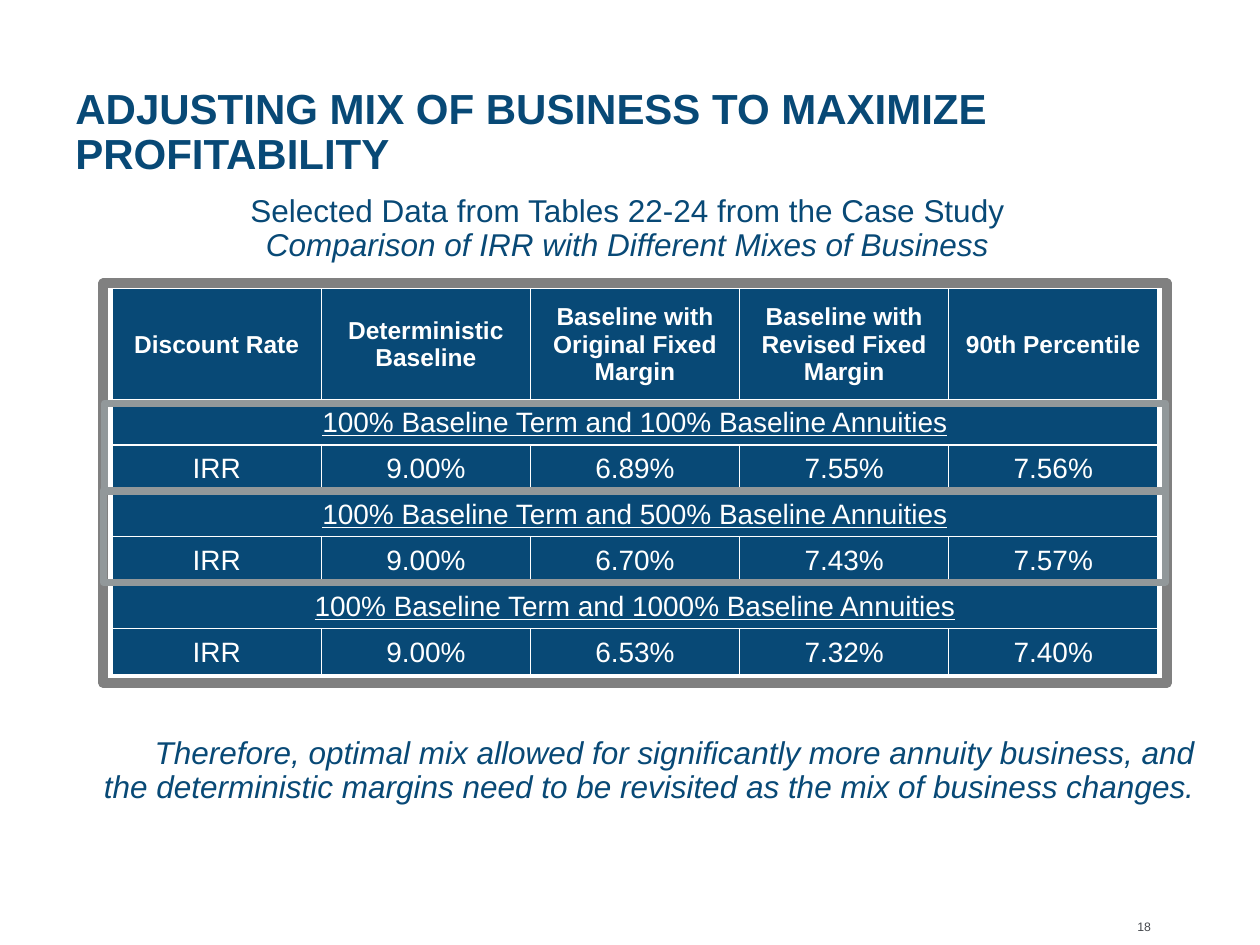
import dataclasses
import typing

import lxml.etree
import pptx
import pptx.dml.color
import pptx.enum.shapes
import pptx.enum.text
import pptx.oxml.ns
import pptx.util

Inches = pptx.util.Inches
Align = pptx.enum.text.PP_ALIGN
Anchor = pptx.enum.text.MSO_ANCHOR


@dataclasses.dataclass(frozen=True)
class Theme:
    font: str = "Arial"
    navy: str = "084976"
    white: str = "FFFFFF"
    frame: str = "808080"
    band: str = "92989A"
    number: str = "45484D"
    title: int = 24
    body: int = 18
    head: int = 14
    cell: int = 16
    small: int = 7


@dataclasses.dataclass(frozen=True)
class Box:
    left: float
    top: float
    width: float
    height: float

    def place(self) -> list:
        return [Inches(n) for n in (self.left, self.top, self.width, self.height)]


@dataclasses.dataclass(frozen=True)
class Frame:
    box: Box
    color: str
    weight: float


@dataclasses.dataclass(frozen=True)
class Line:
    text: str
    size: int
    color: str
    align: Align = Align.LEFT
    bold: bool = False
    italic: bool = False
    under: bool = False
    pitch: float = 1.0
    before: float = 0


@dataclasses.dataclass(frozen=True)
class Mix:
    name: str
    rates: tuple


LOOK = Theme()

# Content
HEADS = ("Discount Rate", "Deterministic Baseline",
         "Baseline with Original Fixed Margin",
         "Baseline with Revised Fixed Margin", "90th Percentile")
MIXES = (
    Mix("100% Baseline Term and 100% Baseline Annuities",
        ("9.00%", "6.89%", "7.55%", "7.56%")),
    Mix("100% Baseline Term and 500% Baseline Annuities",
        ("9.00%", "6.70%", "7.43%", "7.57%")),
    Mix("100% Baseline Term and 1000% Baseline Annuities",
        ("9.00%", "6.53%", "7.32%", "7.40%")),
)
TITLE = Line("ADJUSTING MIX OF BUSINESS TO MAXIMIZE PROFITABILITY",
             LOOK.title, LOOK.navy, bold=True, pitch=0.9)
BODY = Line("Selected Data from Tables 22-24 from the Case Study",
            LOOK.body, LOOK.navy, Align.CENTER, pitch=0.9)
NOTE = dataclasses.replace(BODY, italic=True, align=Align.RIGHT)
COPY = (
    BODY,
    dataclasses.replace(
        BODY, text="Comparison of IRR with Different Mixes of Business",
        italic=True),
    dataclasses.replace(
        NOTE, text="Therefore, optimal mix allowed for significantly more "
        "annuity business, and", before=271),
    dataclasses.replace(
        NOTE, text="the deterministic margins need to be revisited as the "
        "mix of business changes."),
)
OUTER = Frame(Box(0.82, 2.25, 8.44, 3.17), LOOK.frame, 5.75)
BANDS = (Frame(Box(0.82, 3.89, 8.43, 0.73), LOOK.band, 4),
         Frame(Box(0.83, 3.2, 8.42, 0.7), LOOK.band, 4))
GRID = Box(0.89, 2.29, 8.3, 3.07)
TALL = (0.88,) + (0.36, 0.37) * len(MIXES)


def tint(code: str) -> pptx.dml.color.RGBColor:
    return pptx.dml.color.RGBColor.from_string(code)


def apply(item: typing.Any, values: dict) -> None:
    for key, value in values.items():
        setattr(item, key, value)


def write(frame: typing.Any, lines: typing.Sequence[Line]) -> None:
    for spot, line in enumerate(lines):
        para = frame.paragraphs[0] if spot == 0 else frame.add_paragraph()
        apply(para, {"alignment": line.align, "line_spacing": line.pitch,
                     "space_before": pptx.util.Pt(line.before)})
        run = para.add_run()
        run.text = line.text
        apply(run.font, {"name": LOOK.font, "size": pptx.util.Pt(line.size),
                         "bold": line.bold, "italic": line.italic,
                         "underline": line.under})
        run.font.color.rgb = tint(line.color)


def add_text(slide: typing.Any, box: Box, lines: typing.Sequence[Line],
             **form: typing.Any) -> None:
    frame = slide.shapes.add_textbox(*box.place()).text_frame
    apply(frame, {"word_wrap": True, **form})
    write(frame, lines)


def add_frame(slide: typing.Any, item: Frame) -> None:
    kind = pptx.enum.shapes.MSO_SHAPE.RECTANGLE
    shape = slide.shapes.add_shape(kind, *item.box.place())
    shape.shadow.inherit = False
    shape.fill.background()
    shape.line.color.rgb = tint(item.color)
    shape.line.width = pptx.util.Pt(item.weight)


def add_edges(cell: typing.Any) -> None:
    props = cell._tc.get_or_add_tcPr()
    name = pptx.oxml.ns.qn
    for side in ("lnL", "lnR", "lnT", "lnB"):
        edge = lxml.etree.SubElement(props, name("a:" + side),
                                     w=str(pptx.util.Pt(1)))
        fill = lxml.etree.SubElement(edge, name("a:solidFill"))
        lxml.etree.SubElement(fill, name("a:srgbClr"), val=LOOK.white)


def set_cell(cell: typing.Any, line: typing.Optional[Line]) -> None:
    add_edges(cell)
    cell.fill.solid()
    cell.fill.fore_color.rgb = tint(LOOK.navy)
    apply(cell, {"vertical_anchor": Anchor.MIDDLE,
                 "margin_left": Inches(0.01), "margin_right": Inches(0.01),
                 "margin_top": Inches(0.01), "margin_bottom": 0})
    if line:
        write(cell.text_frame, [line])


def add_grid(slide: typing.Any) -> None:
    count = len(HEADS)
    table = slide.shapes.add_table(len(TALL), count, *GRID.place()).table
    for col in table.columns:
        col.width = Inches(GRID.width / count)
    for row, size in zip(table.rows, TALL):
        row.height = Inches(size)

    head = Line("", LOOK.head, LOOK.white, Align.CENTER, bold=True)
    plain = dataclasses.replace(head, size=LOOK.cell, bold=False)
    band = dataclasses.replace(plain, under=True)
    rows = [(head, HEADS)]
    for mix in MIXES:
        rows += [(band, (mix.name,)), (plain, ("IRR",) + mix.rates)]

    for y, (style, texts) in enumerate(rows):
        for x in range(count):
            line = None
            if x < len(texts):
                line = dataclasses.replace(style, text=texts[x])
            set_cell(table.cell(y, x), line)
        if len(texts) == 1:
            table.cell(y, 0).merge(table.cell(y, count - 1))


def main() -> None:
    deck = pptx.Presentation()
    apply(deck, {"slide_width": Inches(10), "slide_height": Inches(7.5)})
    slide = deck.slides.add_slide(deck.slide_layouts[6])

    # Outer frame, title and copy
    add_frame(slide, OUTER)
    add_text(slide, Box(0.5, 0.65, 9, 0.93), [TITLE])
    add_text(slide, Box(0.38, 1.5, 9.2, 5.33), COPY)

    # Table with the frames around its mixes
    add_grid(slide)
    for band in BANDS:
        add_frame(slide, band)

    # Page number
    page = Line("18", LOOK.small, LOOK.number, Align.CENTER)
    add_text(slide, Box(8.67, 7.18, 0.82, 0.23), [page], word_wrap=False,
             vertical_anchor=Anchor.BOTTOM, margin_left=0, margin_right=0,
             margin_top=0, margin_bottom=0)
    deck.save("out.pptx")


if __name__ == "__main__":
    main()
